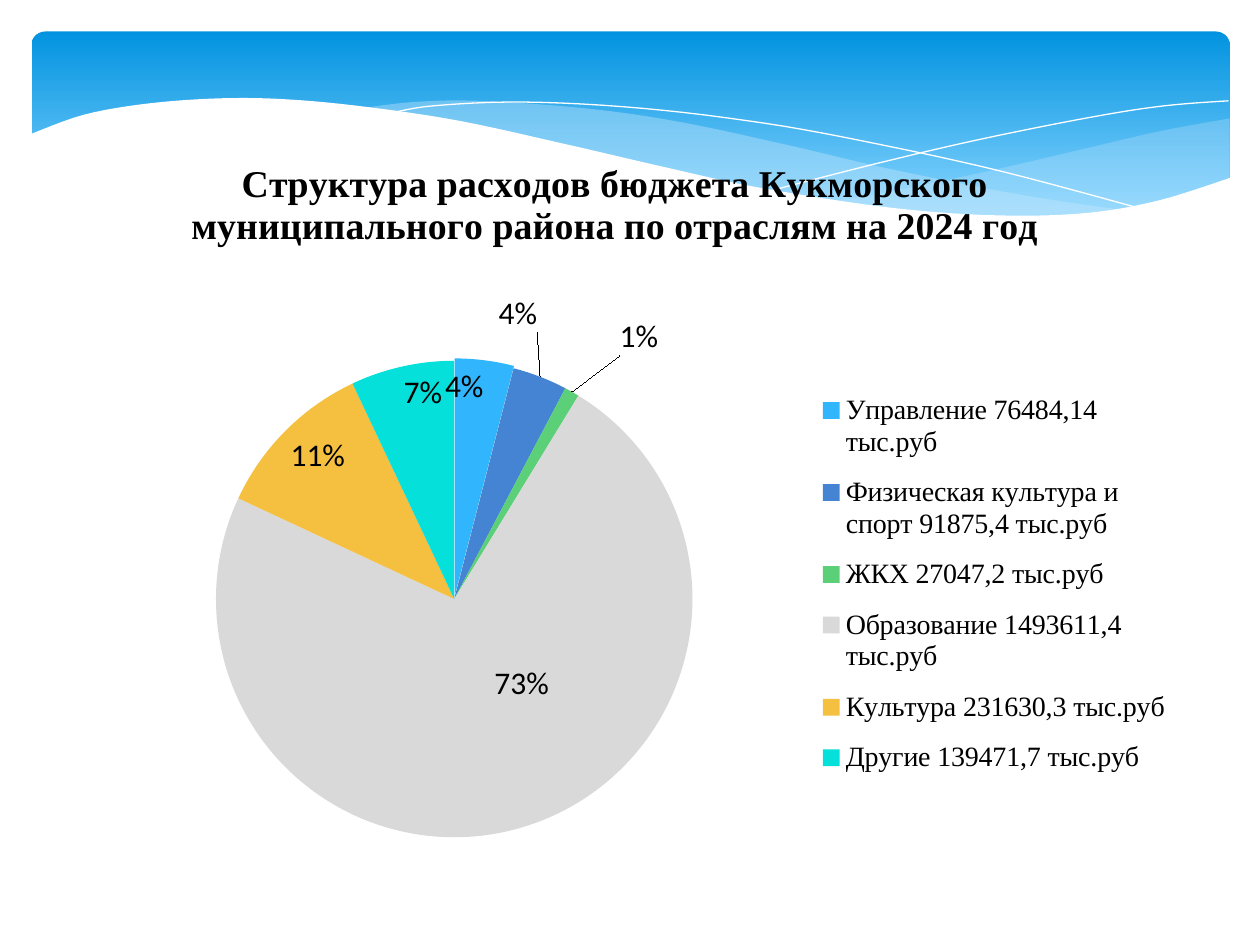
from lxml.etree import SubElement
from pptx import Presentation
from pptx.chart.data import CategoryChartData
from pptx.dml.color import RGBColor
from pptx.enum.chart import XL_CHART_TYPE as Chart, XL_LABEL_POSITION as Pos
from pptx.enum.chart import XL_LEGEND_POSITION as LegendPos
from pptx.enum.shapes import MSO_SHAPE as Shape
from pptx.oxml.ns import qn
from pptx.util import Inches, Pt

SERIF = "Times New Roman"
TITLE = "Структура расходов бюджета Кукморского муниципального района по отраслям на 2024 год"
# category, share, colour, label position, label shift (fractions of the chart)
SECTORS = [
    ("Управление 76484,14 тыс.руб", 0.04, "31B6FD", Pos.INSIDE_END, None),
    ("Физическая культура и спорт 91875,4 тыс.руб", 0.037, "4584D3", Pos.OUTSIDE_END, (-0.04, -0.05)),
    ("ЖКХ 27047,2 тыс.руб", 0.01, "5BD078", Pos.OUTSIDE_END, (0.04, -0.04)),
    ("Образование 1493611,4 тыс.руб", 0.73, "D9D9D9", Pos.CENTER, (0.03, -0.04)),
    ("Культура 231630,3 тыс.руб", 0.11, "F5C040", Pos.INSIDE_END, None),
    ("Другие 139471,7 тыс.руб", 0.07, "05E0DB", Pos.INSIDE_END, None),
]

# Wave edges: key points that a smooth curve runs through
LIGHT_TOP = [(9.76, 0.94), (9.21, 1.04), (8.61, 1.18), (7.79, 1.37), (7.06, 1.52), (6.61, 1.6)]
LIGHT_BOTTOM = [(6.61, 1.6), (7.19, 1.67), (7.81, 1.72), (8.35, 1.72), (8.89, 1.66), (9.35, 1.56), (9.76, 1.41)]
MIDDLE_TOP = [(8.93, 1.67), (8.07, 1.54), (7.06, 1.34), (6.29, 1.16), (5.41, 0.97),
              (4.65, 0.86), (3.8, 0.8), (3.28, 0.81), (2.86, 0.86)]
MIDDLE_BOTTOM = [(2.86, 0.86), (3.62, 0.97), (4.49, 1.16), (5.66, 1.43), (6.5, 1.58),
                 (7.22, 1.68), (8.07, 1.73), (8.57, 1.71), (8.93, 1.67)]
LONG_LINE = [(3.09, 0.9), (3.44, 0.84), (4.16, 0.81), (5.1, 0.86), (6.08, 0.98),
             (6.95, 1.14), (7.95, 1.36), (9.07, 1.66)]
SHORT_LINE = [(6.13, 1.51), (6.95, 1.3), (7.76, 1.11), (8.66, 0.93), (9.24, 0.84), (9.75, 0.8)]
WHITE_TOP = [(9.77, 1.41), (9.2, 1.59), (8.63, 1.69), (7.93, 1.71), (7.08, 1.65), (6.03, 1.49),
             (5.29, 1.33), (4.47, 1.14), (3.65, 0.96), (2.92, 0.85), (2.3, 0.79), (1.77, 0.78),
             (1.19, 0.82), (0.67, 0.91), (0.23, 1.07)]


def color(hex_str):
    return RGBColor.from_string(hex_str)


def smooth(keys, steps=6):
    """Points of a Catmull-Rom curve through the keys."""
    ext = [keys[0], *keys, keys[-1]]
    pts = [keys[0]]
    for a, b, c, d in zip(ext, ext[1:], ext[2:], ext[3:]):
        for i in range(1, steps + 1):
            t = i / steps
            pts.append(tuple(
                (2 * q + (r - p) * t + (2 * p - 5 * q + 4 * r - s) * t ** 2
                 + (3 * q - p - 3 * r + s) * t ** 3) / 2
                for p, q, r, s in zip(a, b, c, d)))
    return pts


def add_wave(slide, pts, fill=None, alpha=None, line=None):
    pts = [(Inches(x), Inches(y)) for x, y in pts]
    fb = slide.shapes.build_freeform(*pts[0], scale=1.0)
    fb.add_line_segments(pts[1:], close=fill is not None)
    s = fb.convert_to_shape()
    s.shadow.inherit = False
    if fill:
        s.fill.solid()
        s.fill.fore_color.rgb = color(fill)
        if alpha:
            clr = s.fill._xPr.find(".//" + qn("a:srgbClr"))
            SubElement(clr, qn("a:alpha"), val=str(alpha * 1000))
    else:
        s.fill.background()
    if line:
        s.line.color.rgb = color(line)
        s.line.width = Pt(0)
    else:
        s.line.fill.background()


def add_banner(slide):
    s = slide.shapes.add_shape(Shape.ROUNDED_RECTANGLE, Inches(0.25), Inches(0.25), Inches(9.51), Inches(1.56))
    s.adjustments[0] = 0.07
    s.shadow.inherit = False
    s.line.fill.background()
    s.fill.gradient()
    s.fill.gradient_angle = 270
    for stop, (pos, hex_str) in zip(s.fill.gradient_stops, [(0, "0293E0"), (0.9, "83D3FE")]):
        stop.position = pos
        stop.color.rgb = color(hex_str)


def set_font(font, size, name="Calibri", bold=False, hex_str="000000"):
    font.size, font.name, font.bold = Pt(size), name, bold
    font.color.rgb = color(hex_str)


def set_text(tf, text, **fmt):
    r = tf.paragraphs[0].add_run()
    r.text = text
    set_font(r.font, **fmt)


def set_layout(parent, index, inner=False, edge=True, **box):
    """Place a chart part by hand, in fractions of the chart."""
    for old in parent.findall(qn("c:layout")):
        parent.remove(old)
    layout = parent.makeelement(qn("c:layout"), {})
    parent.insert(index, layout)
    manual = SubElement(layout, qn("c:manualLayout"))
    if inner:
        SubElement(manual, qn("c:layoutTarget"), val="inner")
    if edge:
        for mode in ("xMode", "yMode"):
            SubElement(manual, qn("c:" + mode), val="edge")
    for key, val in box.items():
        SubElement(manual, qn("c:" + key), val=str(val))


def add_pie(slide):
    data = CategoryChartData(number_format="0%")
    data.categories = [sector[0] for sector in SECTORS]
    data.add_series("Series 1", [sector[1] for sector in SECTORS])
    chart = slide.shapes.add_chart(Chart.PIE, Inches(0.59), Inches(1.15), Inches(8.74), Inches(5.91), data).chart
    set_font(chart.font, 18)

    # Title, legend and plot area
    chart.has_title = True
    set_text(chart.chart_title.text_frame, TITLE, size=21.6, name=SERIF, bold=True)
    set_layout(chart.chart_title._element, 1, x=0.1, y=0.01)
    chart.has_legend = True
    chart.legend.position = LegendPos.RIGHT
    chart.legend.include_in_layout = False
    set_font(chart.legend.font, 16, SERIF)
    set_layout(chart.legend._element, 1, x=0.67, y=0.31, w=0.33, h=0.56)
    plot_area = chart._chartSpace.find(".//" + qn("c:plotArea"))
    set_layout(plot_area, 0, inner=True, x=0.07, y=0.29, w=0.55, h=0.64)

    # Sectors and their labels
    chart.plots[0].vary_by_categories = True
    series = chart.plots[0].series[0]
    labels = series.data_labels
    labels.show_value = True
    labels.number_format, labels.number_format_is_linked = "0%", False
    set_font(labels.font, 18)
    for i, (_, _, hex_str, pos, shift) in enumerate(SECTORS):
        point = series.points[i]
        point.format.fill.solid()
        point.format.fill.fore_color.rgb = color(hex_str)
        point.data_label.position = pos
        if shift:
            dLbl = labels._element.findall(qn("c:dLbl"))[i]
            set_layout(dLbl, 1, edge=False, x=shift[0], y=shift[1])
    # The first sector stands out a little
    first = series._element.find(qn("c:dPt"))
    explosion = first.makeelement(qn("c:explosion"), {"val": "1"})
    first.find(qn("c:spPr")).addprevious(explosion)


def main():
    prs = Presentation()
    prs.slide_width, prs.slide_height = Inches(10), Inches(7.5)
    slide = prs.slides.add_slide(prs.slide_layouts[6])

    # Banner with waves
    add_banner(slide)
    add_wave(slide, smooth(LIGHT_TOP) + smooth(LIGHT_BOTTOM), fill="C6E7FC", alpha=29)
    add_wave(slide, smooth(MIDDLE_TOP) + smooth(MIDDLE_BOTTOM), fill="C6E7FC", alpha=40)
    for keys in (LONG_LINE, SHORT_LINE):
        add_wave(slide, smooth(keys), line="FFFFFF")
    add_wave(slide, smooth(WHITE_TOP) + [(0.23, 2.24), (9.77, 2.24)], fill="FFFFFF")

    add_pie(slide)
    prs.save("out.pptx")


if __name__ == "__main__":
    main()
